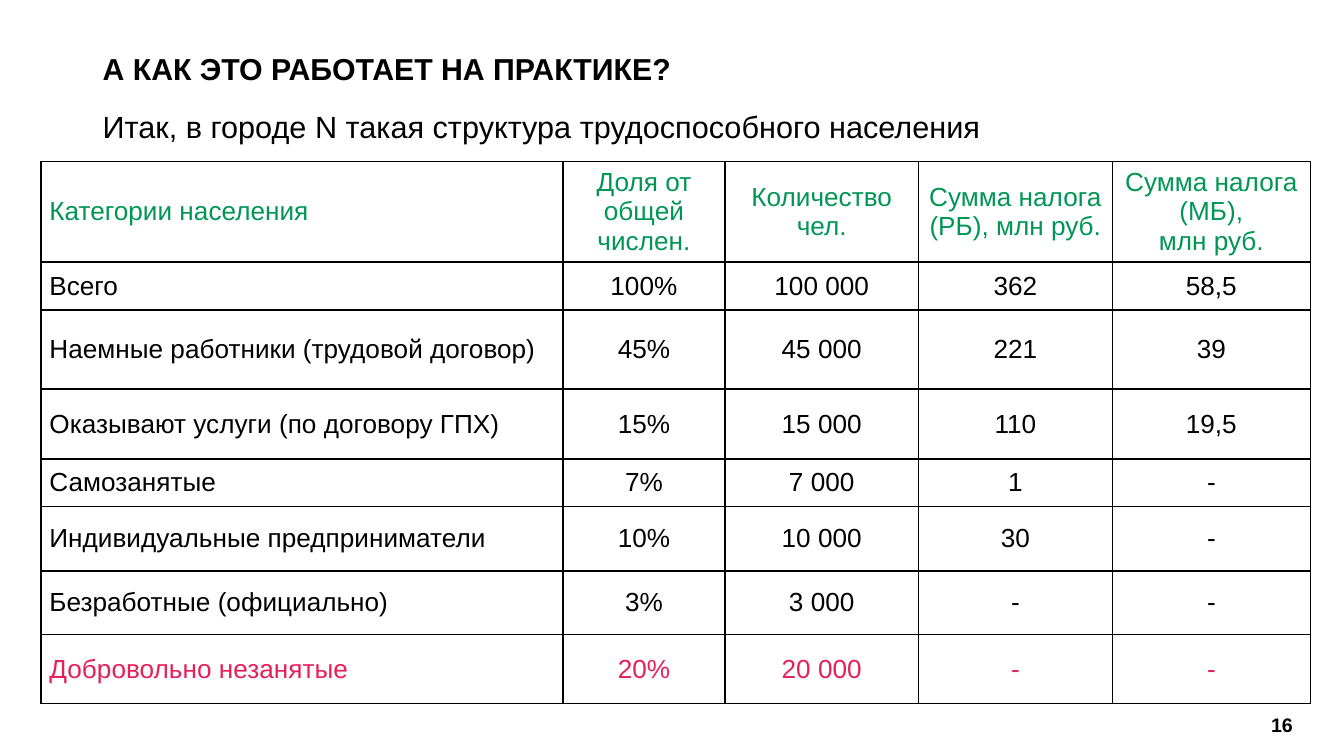
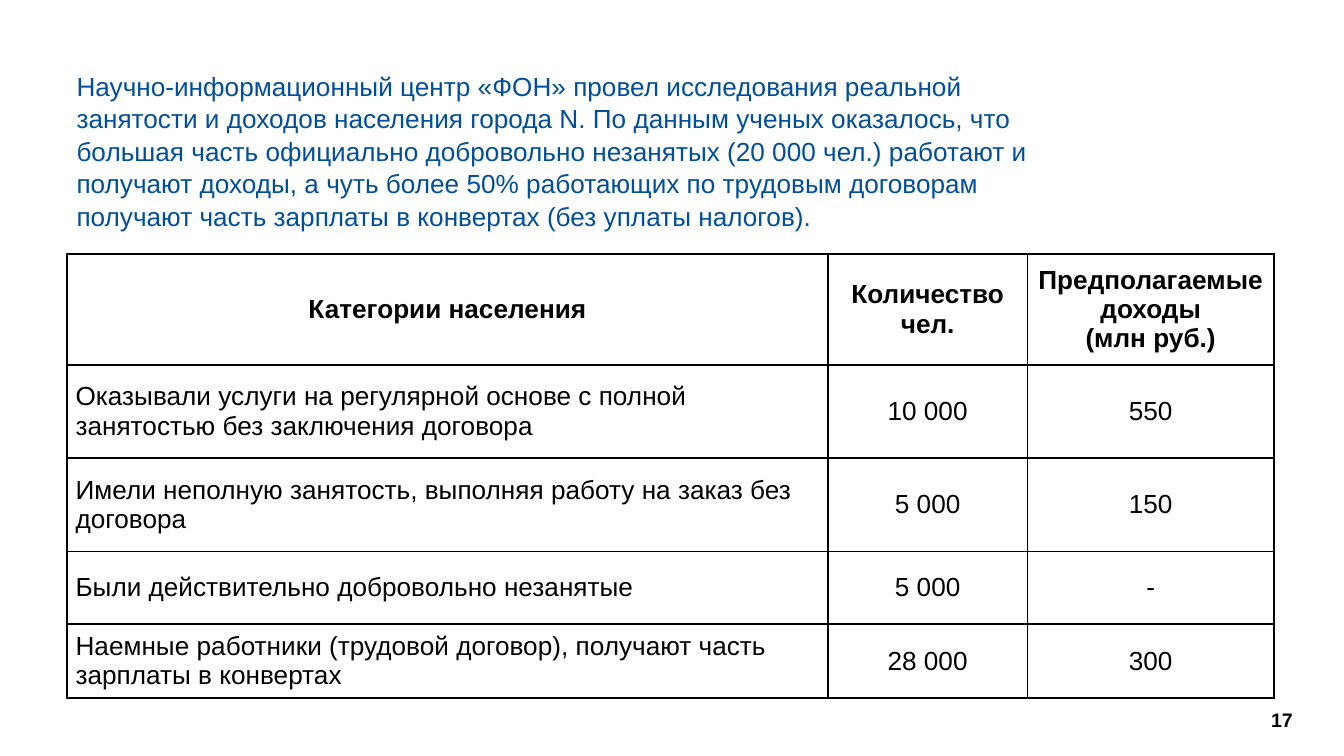
from lxml.etree import SubElement
from pptx import Presentation
from pptx.dml.color import RGBColor
from pptx.enum.text import MSO_ANCHOR, PP_ALIGN
from pptx.oxml import parse_xml
from pptx.oxml.ns import nsdecls, qn
from pptx.util import Pt

BLACK, GREEN, RED, BLUE = "000000", "009655", "E5205A", "004E9E"
CELL_INSET = Pt(4.5)
CELL_FONT = {"name": "Arial", "size": Pt(14), "bold": False}
TITLE_FONT = {"name": "Arial", "size": Pt(16.2), "bold": True}
SUBTITLE_FONT = {"name": "Arial", "size": Pt(16.4), "bold": False}
NUMBER_FONT = {"name": "Arial", "size": Pt(10.5), "bold": True}


def add_text(slide, box, paragraphs, colour, spacing, alignment=PP_ALIGN.LEFT):
    """Add a text box; each paragraph is a text, its font and its space before."""
    shape = slide.shapes.add_textbox(*[Pt(length) for length in box])
    frame = shape.text_frame
    frame.word_wrap = True
    frame.vertical_anchor = MSO_ANCHOR.MIDDLE
    frame.margin_left = frame.margin_right = Pt(5)
    frame.margin_top = frame.margin_bottom = Pt(3)
    for index, (text, font, space_before) in enumerate(paragraphs):
        paragraph = frame.add_paragraph() if index else frame.paragraphs[0]
        paragraph.text = text
        paragraph.alignment = alignment
        paragraph.line_spacing = spacing
        paragraph.space_before = Pt(space_before)
        for attribute, value in font.items():
            setattr(paragraph.font, attribute, value)
        paragraph.font.color.rgb = RGBColor.from_string(colour)


def add_grid(slide, left, top, widths, heights, rows, row_colours, header):
    """Add a ruled table; header holds the bold flag and first-cell alignment."""
    shape = slide.shapes.add_table(len(rows), len(widths), Pt(left), Pt(top),
                                   Pt(sum(widths)), Pt(sum(heights)))
    table = shape.table
    table.first_row = table.horz_banding = False
    for column, width in zip(table.columns, widths):
        column.width = Pt(width)
    for row, height in zip(table.rows, heights):
        row.height = Pt(height)

    for row_index, texts in enumerate(rows):
        for column_index, text in enumerate(texts):
            cell = table.cell(row_index, column_index)
            cell.text = text
            cell.fill.background()
            cell.vertical_anchor = MSO_ANCHOR.MIDDLE
            cell.margin_left = cell.margin_right = CELL_INSET
            cell.margin_top = cell.margin_bottom = 0

            font = dict(CELL_FONT)
            alignment = PP_ALIGN.CENTER if column_index else PP_ALIGN.LEFT
            if row_index == 0:
                font["bold"] = header["bold"]
                alignment = PP_ALIGN.CENTER if column_index else header["alignment"]
            for paragraph in cell.text_frame.paragraphs:
                paragraph.alignment = alignment
                for attribute, value in font.items():
                    setattr(paragraph.font, attribute, value)
                colour = row_colours.get(row_index, BLACK)
                paragraph.font.color.rgb = RGBColor.from_string(colour)

            # Cell borders come before the fill
            properties = cell._tc.get_or_add_tcPr()
            for position, side in enumerate(("lnL", "lnR", "lnT", "lnB")):
                border = parse_xml(f'<a:{side} {nsdecls("a")} w="{Pt(1)}"/>')
                fill = SubElement(border, qn("a:solidFill"))
                SubElement(fill, qn("a:srgbClr"), val=BLACK)
                properties.insert(position, border)


presentation = Presentation()
presentation.slide_width = Pt(720)
presentation.slide_height = Pt(405)
blank_layout = presentation.slide_layouts[6]

# Slide 16: structure of the working-age population
slide = presentation.slides.add_slide(blank_layout)
population = [
    ("Категории населения", "Доля от общей числен.", "Количество чел.",
     "Сумма налога (РБ), млн руб.", "Сумма налога (МБ),\nмлн руб."),
    ("Всего", "100%", "100 000", "362", "58,5"),
    ("Наемные работники (трудовой договор)", "45%", "45 000", "221", "39"),
    ("Оказывают услуги (по договору ГПХ)", "15%", "15 000", "110", "19,5"),
    ("Самозанятые", "7%", "7 000", "1", "-"),
    ("Индивидуальные предприниматели", "10%", "10 000", "30", "-"),
    ("Безработные (официально)", "3%", "3 000", "-", "-"),
    ("Добровольно незанятые", "20%", "20 000", "-", "-"),
]
add_grid(slide, 22, 86.5, [279.5, 87, 103.5, 104, 106],
         [54, 25.5, 42.5, 37.5, 25.5, 34.5, 34, 37], population,
         {0: GREEN, 7: RED}, {"bold": False, "alignment": PP_ALIGN.LEFT})
add_text(slide, (50, 21.5, 620.5, 65), [
    ("А КАК ЭТО РАБОТАЕТ НА ПРАКТИКЕ?", TITLE_FONT, 0),
    ("Итак, в городе N такая структура трудоспособного населения",
     SUBTITLE_FONT, 15),
], BLACK, 0.8)

# Slide 17: real employment and income
slide = presentation.slides.add_slide(blank_layout)
add_text(slide, (36, 21.5, 521.5, 118), [
    ("Научно-информационный центр «ФОН» провел исследования реальной "
     "занятости и доходов населения города N. По данным ученых оказалось, "
     "что большая часть официально добровольно незанятых (20 000 чел.) "
     "работают и получают доходы, а чуть более 50% работающих по трудовым "
     "договорам получают часть зарплаты в конвертах (без уплаты налогов).",
     CELL_FONT, 0),
], BLUE, 1.04)
employment = [
    ("Категории населения", "Количество чел.",
     "Предполагаемые доходы\v(млн руб.)"),
    ("Оказывали услуги на регулярной основе с полной занятостью "
     "без заключения договора", "10 000", "550"),
    ("Имели неполную занятость, выполняя работу на заказ без договора",
     "5 000", "150"),
    ("Были действительно добровольно незанятые", "5 000", "-"),
    ("Наемные работники (трудовой договор), получают часть зарплаты "
     "в конвертах", "28 000", "300"),
]
add_grid(slide, 36, 136, [407.5, 107, 132], [59.5, 50, 50, 39, 39.5],
         employment, {}, {"bold": True, "alignment": PP_ALIGN.CENTER})

# Page numbers
for slide, number, top in zip(presentation.slides, ("16", "17"), (377.5, 375)):
    add_text(slide, (658, top, 57.5, 21.5), [(number, NUMBER_FONT, 0)],
             BLACK, 1, PP_ALIGN.CENTER)

presentation.save("out.pptx")
